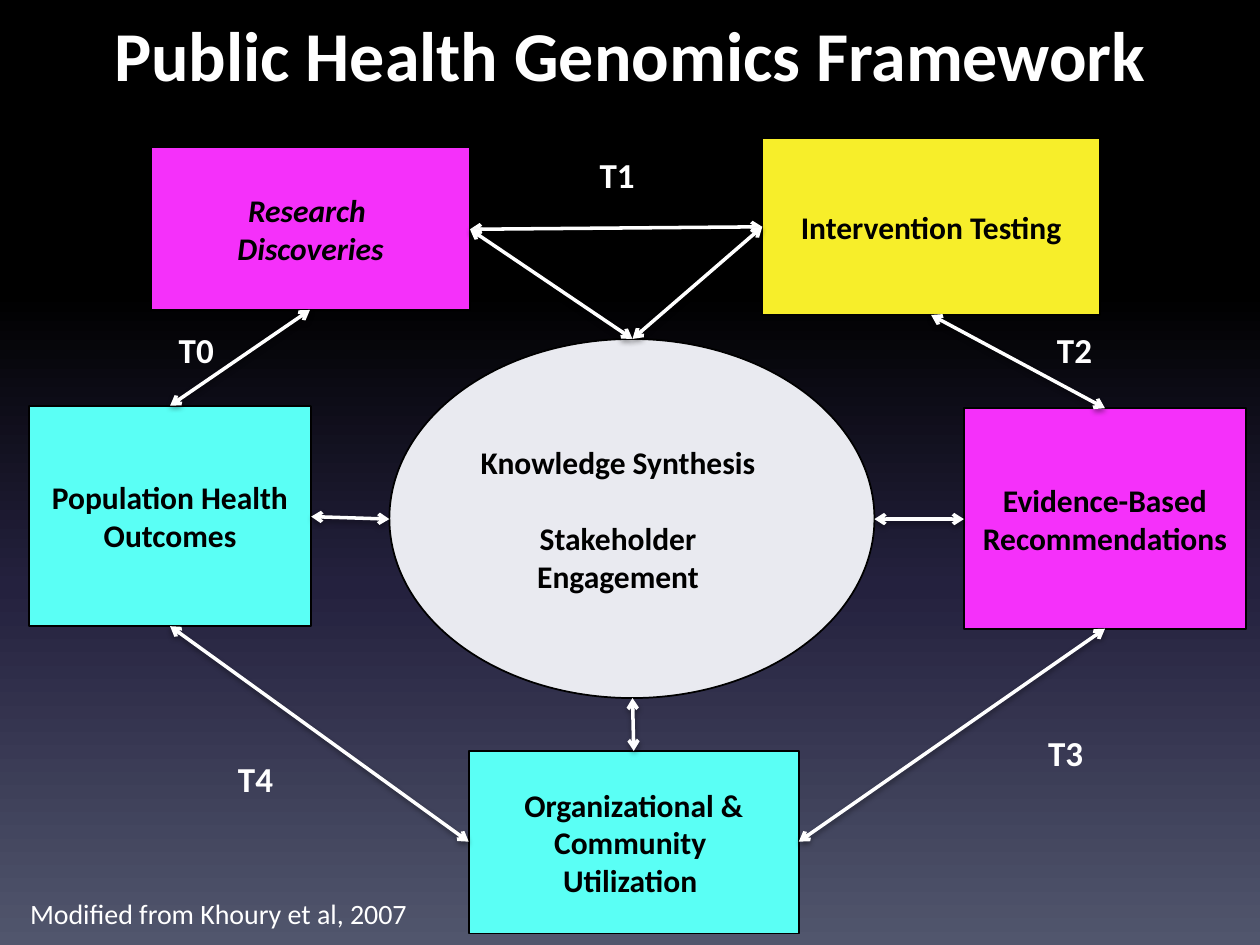
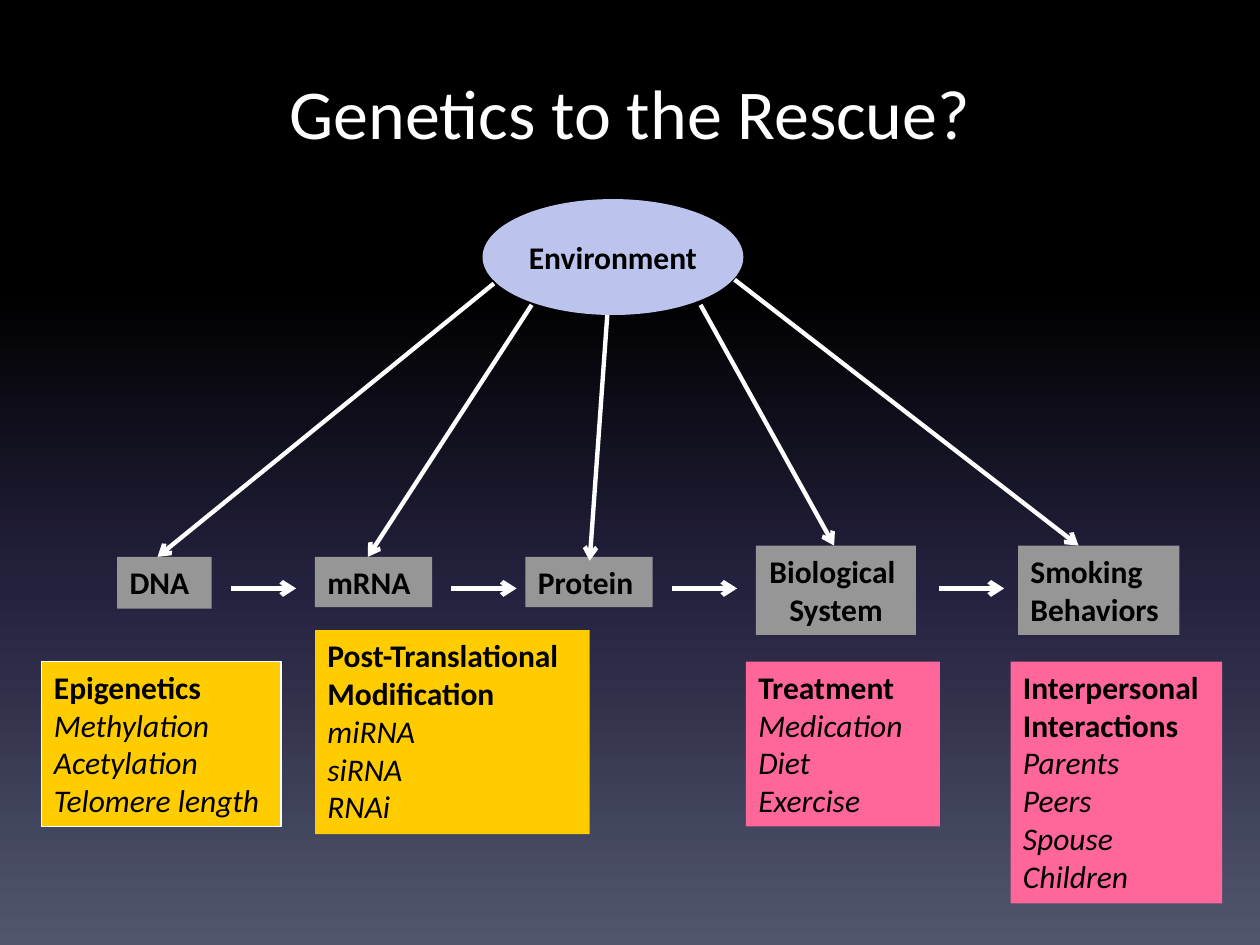
from lxml import etree
from pptx import Presentation
from pptx.dml.color import RGBColor
from pptx.enum.shapes import MSO_CONNECTOR, MSO_SHAPE
from pptx.enum.text import MSO_ANCHOR, PP_ALIGN
from pptx.oxml.ns import qn
from pptx.util import Pt

PX = 9144  # EMU in one px, 100 px to the inch
FONT = "Calibri"
RECT, OVAL = MSO_SHAPE.RECTANGLE, MSO_SHAPE.OVAL
STRAIGHT = MSO_CONNECTOR.STRAIGHT
LEFT, CENTER = PP_ALIGN.LEFT, PP_ALIGN.CENTER
TOP, MIDDLE = MSO_ANCHOR.TOP, MSO_ANCHOR.MIDDLE

BLACK = RGBColor(0x00, 0x00, 0x00)
WHITE = RGBColor(0xFF, 0xFF, 0xFF)
NAVY = RGBColor(0x24, 0x21, 0x3E)
SLATE = RGBColor(0x51, 0x56, 0x6D)
MAGENTA = RGBColor(0xF5, 0x30, 0xFA)
CYAN = RGBColor(0x5A, 0xFF, 0xF5)
YELLOW = RGBColor(0xFF, 0xF6, 0x2C)
PALE = RGBColor(0xE9, 0xEA, 0xF0)
LAVENDER = RGBColor(0xBC, 0xC4, 0xED)
GOLD = RGBColor(0xFF, 0xCC, 0x00)
PINK = RGBColor(0xFF, 0x66, 0x99)
GRAY = RGBColor(0x96, 0x96, 0x96)

BACKGROUND_STOPS = [(0, BLACK), (31, BLACK), (62, NAVY), (100, SLATE)]

# Framework slide: name -> (shape, area, fill, paragraphs)
STAGES = {
    "research": (RECT, (120, 117, 253, 129), MAGENTA, ["Research ", "Discoveries"]),
    "utilization": (RECT, (372, 596, 262, 145), CYAN,
                    ["Organizational & Community ", "Utilization "]),
    "outcomes": (RECT, (23, 322, 224, 175), CYAN, ["Population Health Outcomes"]),
    "evidence": (RECT, (765, 324, 224, 175), MAGENTA, ["Evidence-Based Recommendations"]),
    "testing": (RECT, (605, 110, 268, 140), YELLOW, ["Intervention Testing"]),
    "synthesis": (OVAL, (309, 269, 385, 285), PALE,
                  ["Knowledge Synthesis", "Stakeholder Engagement"]),
}
FLOWS = [
    ("outcomes", "top", "research", "bottom"),
    ("research", "right", "testing", "left"),
    ("outcomes", "bottom", "utilization", "left"),
    ("evidence", "bottom", "utilization", "right"),
    ("testing", "bottom", "evidence", "top"),
    ("outcomes", "right", "synthesis", "left"),
    ("evidence", "left", "synthesis", "right"),
    ("synthesis", "bottom", "utilization", "top"),
    ("research", "right", "synthesis", "top"),
    ("testing", "left", "synthesis", "top"),
]
PHASES = {"T0": (132, 256), "T1": (466, 117), "T2": (829, 256),
          "T3": (822, 576), "T4": (179, 596)}
CREDIT = "Modified from Khoury et al, 2007"

# Genetics slide
CHAIN = [
    ((93, 442, 75, 41), LEFT, ["DNA"]),
    ((250, 442, 93, 40), LEFT, ["mRNA"]),
    ((417, 442, 101, 40), LEFT, ["Protein"]),
    ((600, 433, 127, 71), CENTER, ["Biological ", "System"]),
    ((808, 433, 128, 71), LEFT, ["Smoking", "Behaviors"]),
]
CHAIN_ARROW_LEFTS = [183, 358, 533, 745]
CHAIN_ARROW_Y, CHAIN_ARROW_LENGTH = 467, 52
INFLUENCES = [  # area, fill, outline, heading lines, items
    ((33, 525, 190, 131), GOLD, WHITE, ["Epigenetics"],
     ["Methylation", "Acetylation", "Telomere length"]),
    ((250, 500, 218, 162), GOLD, None, ["Post-Translational", "Modification"],
     ["miRNA", "siRNA", "RNAi"]),
    ((592, 525, 154, 131), PINK, None, ["Treatment"],
     ["Medication", "Diet", "Exercise"]),
    ((802, 525, 168, 192), PINK, None, ["Interpersonal", "Interactions"],
     ["Parents", "Peers", "Spouse", "Children"]),
]
ENVIRONMENT_AREA = (383, 158, 207, 92)
ENVIRONMENT_ARROWS = [
    ((392, 225), (125, 442)),
    ((422, 242), (292, 442)),
    ((482, 250), (468, 445)),
    ((556, 242), (662, 433)),
    ((583, 222), (856, 433)),
]


def emu(lengths):
    return [length * PX for length in lengths]


def set_background(master):
    fill = master.background.fill
    fill.gradient()
    fill.gradient_angle = 270
    stops = master.element.find(".//" + qn("a:gsLst"))
    for stop in list(stops):
        stops.remove(stop)
    for percent, color in BACKGROUND_STOPS:
        stop = etree.SubElement(stops, qn("a:gs"), pos=str(percent * 1000))
        etree.SubElement(stop, qn("a:srgbClr"), val=str(color))


def write(shape, lines, size=18, color=BLACK, bold=True, align=LEFT, anchor=TOP, wrap=True):
    """Fill a shape with one paragraph per line and return the paragraphs."""
    frame = shape.text_frame
    frame.text = "\n".join(lines)
    frame.word_wrap = wrap
    frame.vertical_anchor = anchor
    for paragraph in frame.paragraphs:
        paragraph.alignment = align
        font = paragraph.font
        font.name, font.size, font.bold = FONT, Pt(size), bold
        font.color.rgb = color
    return frame.paragraphs


def add_label(slide, area, text, size, **style):
    box = slide.shapes.add_textbox(*emu(area))
    return write(box, [text], size, WHITE, **style)[0]


def add_title(slide, top, text, bold):
    return add_label(slide, (50, top, 900, 125), text, 40, bold=bold, align=CENTER)


def add_block(slide, kind, area, fill, outline=None, width=1):
    block = slide.shapes.add_shape(kind, *emu(area))
    block.shadow.inherit = False
    block.fill.solid()
    block.fill.fore_color.rgb = fill
    if outline is None:
        block.line.fill.background()
    else:
        block.line.color.rgb = outline
        block.line.width = Pt(width)
    return block


def add_arrow(slide, start, end, width, two_way=False, shadow=False):
    arrow = slide.shapes.add_connector(STRAIGHT, *emu(start + end))
    arrow.line.color.rgb = WHITE
    arrow.line.width = Pt(width)
    for tag in ["a:headEnd", "a:tailEnd"] if two_way else ["a:tailEnd"]:
        etree.SubElement(arrow.line._get_or_add_ln(), qn(tag), type="arrow")
    effects = etree.SubElement(arrow._element.spPr, qn("a:effectLst"))
    if shadow:
        cast = etree.SubElement(effects, qn("a:outerShdw"), blurRad="40000",
                                dist="20000", dir="5400000", rotWithShape="0")
        color = etree.SubElement(cast, qn("a:srgbClr"), val=str(BLACK))
        etree.SubElement(color, qn("a:alpha"), val="38000")


def edge_point(stage, side):
    left, top, width, height = STAGES[stage][1]
    across, down = {"top": (0.5, 0), "bottom": (0.5, 1),
                    "left": (0, 0.5), "right": (1, 0.5)}[side]
    return round(left + across * width), round(top + down * height)


def build_framework(slide):
    add_title(slide, 12, "Public Health Genomics Framework", True).line_spacing = 0.9
    for name, (kind, area, fill, lines) in STAGES.items():
        block = add_block(slide, kind, area, fill, BLACK)
        paragraphs = write(block, lines, align=CENTER, anchor=MIDDLE)
        if name == "research":
            for paragraph in paragraphs:
                paragraph.font.italic = True
        elif name == "testing":
            color = block._element.spPr.find(".//" + qn("a:srgbClr"))
            etree.SubElement(color, qn("a:alpha"), val="97000")
        elif name == "synthesis":
            paragraphs[0]._p.get_or_add_pPr().set("marR", str(22 * PX))
            paragraphs[1].space_before = Pt(22)
    for source, source_side, target, target_side in FLOWS:
        add_arrow(slide, edge_point(source, source_side), edge_point(target, target_side),
                  2, two_way=True, shadow=True)
    for phase, place in PHASES.items():
        add_label(slide, place + (51, 44), phase, 20)
    add_label(slide, (14, 707, 323, 37), CREDIT, 16, bold=False)


def build_genetics(slide):
    for left in CHAIN_ARROW_LEFTS:
        add_arrow(slide, (left, CHAIN_ARROW_Y),
                  (left + CHAIN_ARROW_LENGTH, CHAIN_ARROW_Y), 2.75)
    environment = add_block(slide, OVAL, ENVIRONMENT_AREA, LAVENDER)
    write(environment, ["Environment"], align=CENTER, anchor=MIDDLE, wrap=False)
    for area, fill, outline, heading, items in INFLUENCES:
        card = add_block(slide, RECT, area, fill, outline, 0.75)
        for paragraph in write(card, heading + items)[len(heading):]:
            paragraph.font.bold, paragraph.font.italic = False, True
    for area, align, lines in CHAIN:
        write(add_block(slide, RECT, area, GRAY), lines, align=align)
    for start, end in ENVIRONMENT_ARROWS:
        add_arrow(slide, start, end, 2.5)
    add_title(slide, 50, "Genetics to the Rescue?", False)


def main():
    deck = Presentation()
    deck.slide_width, deck.slide_height = emu((1000, 750))
    set_background(deck.slide_master)
    blank = deck.slide_layouts[6]
    for build in (build_framework, build_genetics):
        build(deck.slides.add_slide(blank))
    deck.save("out.pptx")


if __name__ == "__main__":
    main()
